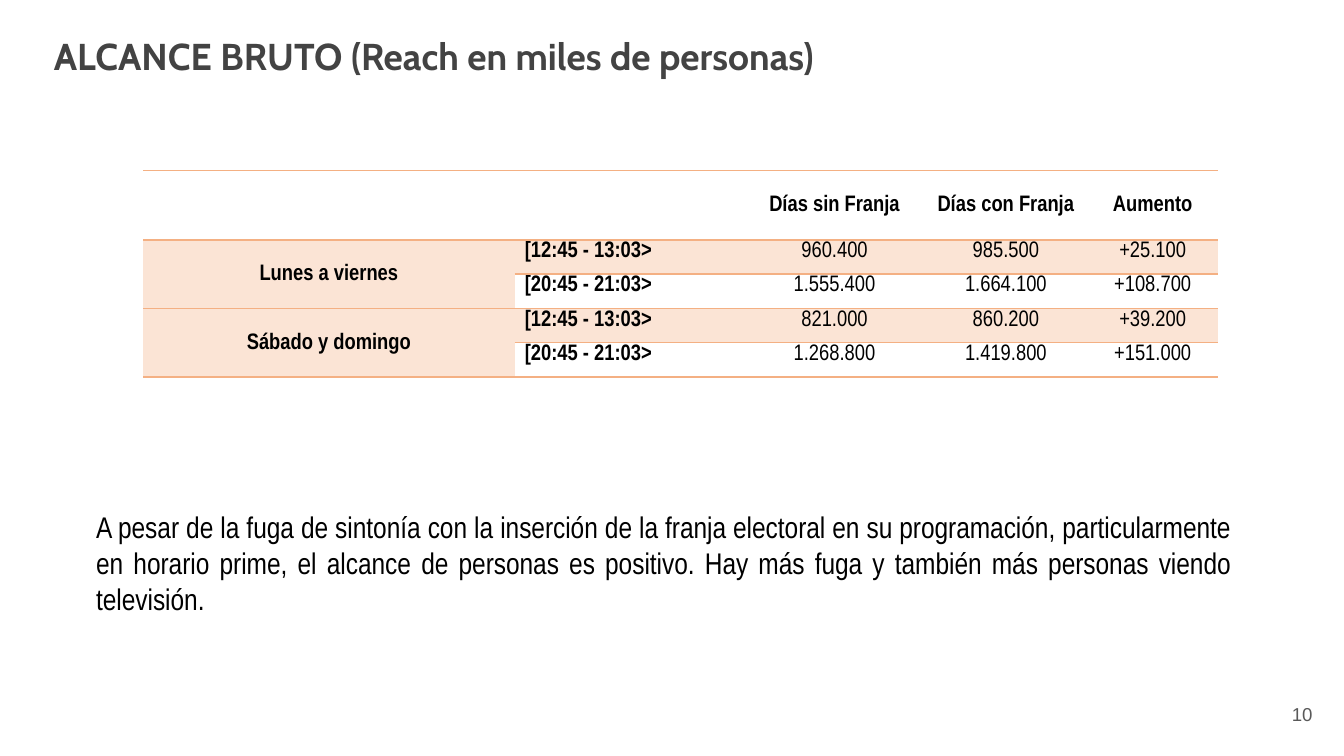
from lxml.etree import SubElement
from pptx import Presentation
from pptx.dml.color import RGBColor
from pptx.enum.text import MSO_ANCHOR as Anchor, MSO_AUTO_SIZE as AutoSize, PP_ALIGN as Align
from pptx.oxml import parse_xml
from pptx.oxml.ns import nsdecls, qn
from pptx.util import Pt

SCALE = 4572
BLACK = RGBColor(0x00, 0x00, 0x00)
DARK_GRAY = RGBColor(0x43, 0x43, 0x43)
GRAY = RGBColor(0x59, 0x59, 0x59)
PEACH = RGBColor(0xFB, 0xE4, 0xD5)
ORANGE = RGBColor(0xF4, 0xB0, 0x83)
NO_STYLE = "{2D5ABB26-0587-4C30-8999-92F81FD0307C}"

COLUMNS = [553, 342, 268, 242, 195]
HEADER_HEIGHT, ROW_HEIGHT = 103, 51
HEADINGS = ["Días sin Franja", "Días con Franja", "Aumento"]
SLOTS = ["[12:45 - 13:03>", "[20:45 - 21:03>"]
GROUPS = [
    ("Lunes a viernes", [["960.400", "985.500", "+25.100"],
                         ["1.555.400", "1.664.100", "+108.700"]]),
    ("Sábado y domingo", [["821.000", "860.200", "+39.200"],
                          ["1.268.800", "1.419.800", "+151.000"]]),
]


def px(length):
    return length * SCALE


def place(shape, box):
    shape.left, shape.top, shape.width, shape.height = map(px, box)


def write(frame, text, size=12, font="Arial Narrow", color=BLACK, bold=False,
          align=Align.LEFT, spacing=1.0):
    para = frame.paragraphs[0]
    para.alignment = align
    para.line_spacing = spacing
    para.space_before = Pt(0)
    span = para.add_run()
    span.text = text
    span.font.size = Pt(size)
    span.font.name = font
    span.font.bold = bold
    span.font.color.rgb = color
    return para


def set_frame(frame, anchor=Anchor.TOP, side=20, edge=20):
    frame.word_wrap = True
    frame.auto_size = AutoSize.NONE
    frame.vertical_anchor = anchor
    frame.margin_left = frame.margin_right = px(side)
    frame.margin_top = frame.margin_bottom = px(edge)


def add_title(page, box):
    title = page.shapes.title
    place(title, box)
    set_frame(title.text_frame)
    write(title.text_frame, "ALCANCE BRUTO (Reach en miles de personas)",
          size=20, font="Cabin", color=DARK_GRAY, bold=True)


def add_comment(page, box):
    body = page.placeholders[1]
    place(body, box)
    set_frame(body.text_frame, edge=10)
    para = write(
        body.text_frame,
        "A pesar de la fuga de sintonía con la inserción de la franja electoral en su "
        "programación, particularmente en horario prime, el alcance de personas es positivo. "
        "Hay más fuga y también más personas viendo televisión.",
        size=16, align=Align.JUSTIFY)
    properties = para._p.get_or_add_pPr()
    properties.set("marL", "0")
    properties.set("indent", "0")
    SubElement(properties, qn("a:buNone"))


def add_page_number(page, box):
    number = page.shapes.add_textbox(*map(px, box))
    set_frame(number.text_frame, Anchor.MIDDLE)
    write(number.text_frame, "10", size=10, font="Arial", color=GRAY, align=Align.RIGHT)


def rule_cell(cell):
    properties = cell._tc.get_or_add_tcPr()
    for index, side in enumerate("TB"):
        properties.insert(index, parse_xml(
            f'<a:ln{side} {nsdecls("a")} w="{Pt(1)}"><a:solidFill>'
            f'<a:srgbClr val="{ORANGE}"/></a:solidFill></a:ln{side}>'))


def fill_cell(cell, text, bold=False, align=Align.CENTER, anchor=Anchor.TOP):
    cell.margin_left = cell.margin_right = px(15)
    cell.margin_top = cell.margin_bottom = 0
    cell.vertical_anchor = anchor
    write(cell.text_frame, text, bold=bold, align=align, spacing=1.07)


def shade(cell, shaded):
    if shaded:
        cell.fill.solid()
        cell.fill.fore_color.rgb = PEACH
    else:
        cell.fill.background()


def add_reach_table(page, left, top):
    row_count = 1 + len(GROUPS) * len(SLOTS)
    height = HEADER_HEIGHT + (row_count - 1) * ROW_HEIGHT
    table = page.shapes.add_table(row_count, len(COLUMNS), px(left), px(top),
                                  px(sum(COLUMNS)), px(height)).table
    table.first_row = table.horz_banding = False
    table._tbl.tblPr.find(qn("a:tableStyleId")).text = NO_STYLE
    for column, width in zip(table.columns, COLUMNS):
        column.width = px(width)
    for index, row in enumerate(table.rows):
        row.height = px(ROW_HEIGHT if index else HEADER_HEIGHT)

    for column, heading in enumerate(HEADINGS, 2):
        fill_cell(table.cell(0, column), heading, bold=True, anchor=Anchor.MIDDLE)
    for group, (days, records) in enumerate(GROUPS):
        first = 1 + group * len(SLOTS)
        fill_cell(table.cell(first, 0), days, bold=True, anchor=Anchor.MIDDLE)
        for row, (slot, values) in enumerate(zip(SLOTS, records), first):
            fill_cell(table.cell(row, 1), slot, bold=True, align=Align.LEFT)
            for column, value in enumerate(values, 2):
                fill_cell(table.cell(row, column), value)

    for row in range(row_count):
        for column in range(len(COLUMNS)):
            cell = table.cell(row, column)
            shade(cell, row and (row % len(SLOTS) == 1 or column == 0))
            rule_cell(cell)

    table.cell(0, 0).merge(table.cell(0, 1))
    for first in range(1, row_count, len(SLOTS)):
        table.cell(first, 0).merge(table.cell(first + len(SLOTS) - 1, 0))


def main():
    deck = Presentation()
    deck.slide_width, deck.slide_height = px(2000), px(1125)
    page = deck.slides.add_slide(deck.slide_layouts[1])
    add_page_number(page, (1853, 1020, 120, 86))
    add_title(page, (60, 30, 1752, 124))
    add_comment(page, (123, 747, 1731, 182))
    add_reach_table(page, 213, 254)
    deck.save("out.pptx")


if __name__ == "__main__":
    main()
